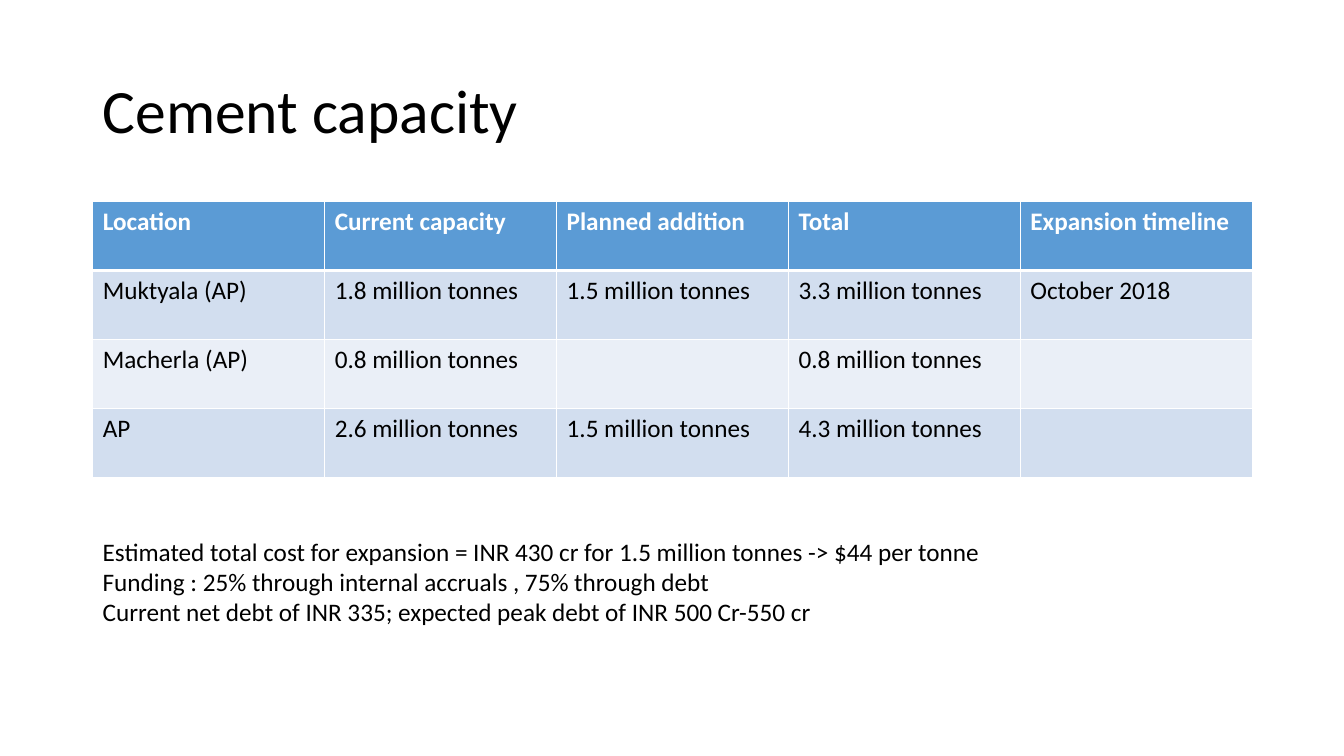
from dataclasses import dataclass

from lxml import etree
from pptx import Presentation
from pptx import util as u
from pptx.dml.color import RGBColor
from pptx.enum import text
from pptx.oxml.ns import qn


@dataclass(frozen=True)
class Theme:
    font: str = "Calibri"
    ink: str = "000000"
    paper: str = "FFFFFF"
    header_fill: str = "5B9BD5"
    band_fills: tuple = ("D2DEEF", "EAEFF7")
    title_size: int = 44
    body_size: int = 18
    rule: int = 1
    header_rule: int = 3


LEFT, WIDTH = 0.92, 11.5
CAPACITY = [
    ["Location", "Current capacity", "Planned addition", "Total", "Expansion timeline"],
    ["Muktyala (AP)", "1.8 million tonnes", "1.5 million tonnes", "3.3 million tonnes", "October 2018"],
    ["Macherla (AP)", "0.8 million tonnes", "", "0.8 million tonnes", ""],
    ["AP", "2.6 million tonnes", "1.5 million tonnes", "4.3 million tonnes", ""],
]
FUNDING_NOTES = [
    "Estimated total cost for expansion = INR 430 cr for 1.5 million tonnes -> $44 per tonne",
    "Funding : 25% through internal accruals , 75% through debt",
    "Current net debt of INR 335; expected peak debt of INR 500 Cr-550 cr",
]


class SlideBuilder:
    def __init__(self, page, theme):
        self.page = page
        self.theme = theme

    def add_span(self, para, words, size, color, bold=False):
        span = para.add_run()
        span.text = words
        span.font.name = self.theme.font
        span.font.size = u.Pt(size)
        span.font.bold = bold
        span.font.color.rgb = RGBColor.from_string(color)

    def text_box(self, area, lines, size, anchor=text.MSO_ANCHOR.TOP, spacing=1.0):
        box = self.page.shapes.add_textbox(*map(u.Inches, area))
        frame = box.text_frame
        frame.word_wrap = True
        frame.vertical_anchor = anchor
        for index, line in enumerate(lines):
            para = frame.add_paragraph() if index else frame.paragraphs[0]
            para.line_spacing = spacing
            self.add_span(para, line, size, self.theme.ink)

    def border(self, cell, side, width):
        """Draw one cell edge; side is L, R, T or B. Call before filling the cell."""
        line = etree.SubElement(cell._tc.get_or_add_tcPr(), qn(f"a:ln{side}"), w=str(u.Pt(width)))
        fill = etree.SubElement(line, qn("a:solidFill"))
        etree.SubElement(fill, qn("a:srgbClr"), val=self.theme.paper)

    def table(self, area, rows):
        theme = self.theme
        table = self.page.shapes.add_table(len(rows), len(rows[0]), *map(u.Inches, area)).table
        for r, row in enumerate(rows):
            header = r == 0
            fill = theme.header_fill if header else theme.band_fills[(r - 1) % 2]
            widths = {
                "L": theme.rule,
                "R": theme.rule,
                "T": theme.header_rule if r == 1 else theme.rule,
                "B": theme.header_rule if header else theme.rule,
            }
            for c, words in enumerate(row):
                cell = table.cell(r, c)
                for side, width in widths.items():
                    self.border(cell, side, width)
                cell.fill.solid()
                cell.fill.fore_color.rgb = RGBColor.from_string(fill)
                para = cell.text_frame.paragraphs[0]
                if words:
                    color = theme.paper if header else theme.ink
                    self.add_span(para, words, theme.body_size, color, header)
                else:
                    para.font.size = u.Pt(theme.body_size)


def main():
    deck = Presentation()
    deck.slide_width, deck.slide_height = u.Inches(13.33), u.Inches(7.5)
    theme = Theme()
    slide = SlideBuilder(deck.slides.add_slide(deck.slide_layouts[6]), theme)
    slide.text_box((LEFT, 0.4, WIDTH, 1.45), ["Cement capacity"], theme.title_size,
                   text.MSO_ANCHOR.MIDDLE, 0.9)
    slide.table((LEFT, 2, WIDTH, 2.74), CAPACITY)
    slide.text_box((LEFT, 5.27, 9.98, 1.31), FUNDING_NOTES, theme.body_size)
    deck.save("out.pptx")


if __name__ == "__main__":
    main()
